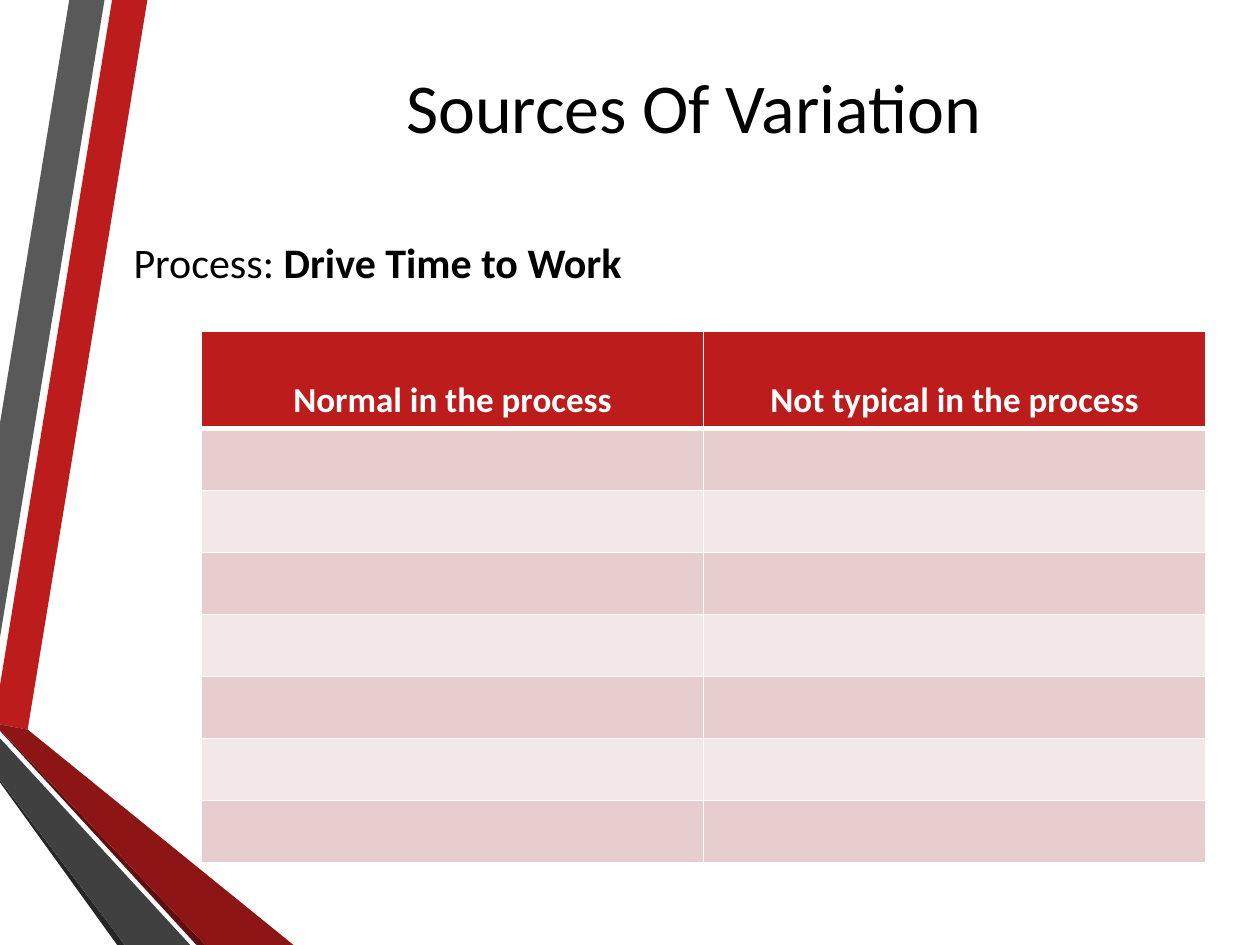
import pptx
import pptx.dml.color
import pptx.enum.text
import pptx.oxml
import pptx.oxml.ns
import pptx.util

RGBColor = pptx.dml.color.RGBColor
RED = RGBColor(0xBC, 0x1C, 0x1C)
DARK_RED = RGBColor(0x8D, 0x15, 0x15)
DEEP_RED = RGBColor(0x5E, 0x0E, 0x0E)
GRAY = RGBColor(0x59, 0x59, 0x59)
DARK_GRAY = RGBColor(0x40, 0x40, 0x40)
DEEP_GRAY = RGBColor(0x26, 0x26, 0x26)
ROSE = RGBColor(0xE7, 0xCD, 0xCD)
PALE_ROSE = RGBColor(0xF3, 0xE8, 0xE8)
BLACK = RGBColor(0, 0, 0)
WHITE = RGBColor(0xFF, 0xFF, 0xFF)

COLS, ROWS = 100, 75
CENTER = pptx.enum.text.PP_ALIGN.CENTER
LEFT = pptx.enum.text.PP_ALIGN.LEFT
ANCHOR = pptx.enum.text.MSO_ANCHOR

RIBBONS = [
    (RED, [(0, 54.4), (0, 57.5), (2.2, 57.9), (11.7, 0), (8.9, 0)]),
    (GRAY, [(8.3, 0), (5.5, 0), (0, 33.6), (0, 50.6)]),
    (DEEP_GRAY, [(0, 61.9), (0, 62.1), (9.3, 75), (9.9, 75)]),
    (DEEP_RED, [(0, 57.9), (0, 58), (15.6, 75), (16.3, 75)]),
    (DARK_RED, [(0, 57.9), (16.3, 75), (23.3, 75), (2.2, 57.9), (0, 57.5)]),
    (DARK_GRAY, [(0, 61.9), (9.9, 75), (15.1, 75), (0, 58.6)]),
]


def set_all(obj, values):
    """Set each named attribute on obj."""
    for name, value in values.items():
        setattr(obj, name, value)


class Deck:
    """Holds the style and the current slide, measured on a 100 by 75 grid."""

    font = "Calibri"

    def __init__(self, prs):
        """Add a title and content slide to prs."""
        self.unit_x = prs.slide_width / COLS
        self.unit_y = prs.slide_height / ROWS
        self.s = prs.slides.add_slide(prs.slide_layouts[1])

    def x(self, cols):
        """Turn grid columns into a length."""
        return pptx.util.Emu(round(cols * self.unit_x))

    def y(self, rows):
        """Turn grid rows into a length."""
        return pptx.util.Emu(round(rows * self.unit_y))

    def box(self, left, top, width, height):
        """Turn a grid box into lengths."""
        return self.x(left), self.y(top), self.x(width), self.y(height)

    def ribbon(self, color, points):
        """Draw a filled polygon."""
        points = [(self.x(a), self.y(b)) for a, b in points]
        builder = self.s.shapes.build_freeform(*points[0])
        builder.add_line_segments(points[1:], close=True)
        sp = builder.convert_to_shape()
        sp.shadow.inherit = False
        sp.fill.solid()
        sp.fill.fore_color.rgb = color
        sp.line.fill.background()

    def add_text(self, p, runs, size, color, align):
        """Put (text, bold) runs into a paragraph."""
        p.alignment = align
        for text, bold in runs:
            r = p.add_run()
            r.text = text
            set_all(r.font, {"name": self.font, "size": pptx.util.Pt(size), "bold": bold})
            r.font.color.rgb = color

    def placeholder(self, idx, box, runs, size, align):
        """Move a placeholder to the front, place it and fill it."""
        sp = self.s.placeholders[idx]
        set_all(sp, dict(zip(("left", "top", "width", "height"), self.box(*box))))
        self.s.shapes._spTree.append(sp._element)
        tf = sp.text_frame
        set_all(tf, {"word_wrap": True, "vertical_anchor": ANCHOR.MIDDLE,
                     "auto_size": pptx.enum.text.MSO_AUTO_SIZE.NONE})
        p = tf.paragraphs[0]
        self.add_text(p, runs, size, BLACK, align)
        return p

    def plain_line(self, p):
        """Drop the bullet of a paragraph and space it."""
        set_all(p, {"line_spacing": 1.3, "space_after": pptx.util.Pt(6)})
        pPr = p._p.get_or_add_pPr()
        pPr.set("marL", "0")
        pPr.set("indent", "0")
        pPr.append(pptx.oxml.parse_xml(f"<a:buNone {pptx.oxml.ns.nsdecls('a')}/>"))

    def cell(self, cell, color, top, bottom):
        """Fill a cell and give it white borders."""
        tcPr = cell._tc.get_or_add_tcPr()
        for side, pt in (("L", 1), ("R", 1), ("T", top), ("B", bottom)):
            tcPr.append(pptx.oxml.parse_xml(
                f"<a:ln{side} {pptx.oxml.ns.nsdecls('a')} w='{int(pptx.util.Pt(pt))}'>"
                f"<a:solidFill><a:srgbClr val='{WHITE}'/></a:solidFill></a:ln{side}>"))
        cell.fill.solid()
        cell.fill.fore_color.rgb = color

    def table(self, box, headers, blank_rows, head_height):
        """Draw a headed table with banded blank rows."""
        rows = blank_rows + 1
        table = self.s.shapes.add_table(rows, len(headers), *self.box(*box)).table
        row_height = (box[3] - head_height) / blank_rows
        for i, row in enumerate(table.rows):
            row.height = self.y(row_height if i else head_height)
            color = (PALE_ROSE, ROSE)[i % 2] if i else RED
            for cell in row.cells:
                self.cell(cell, color, 3 if i == 1 else 1, 3 if i == 0 else 1)
        for cell, text in zip(table.rows[0].cells, headers):
            cell.vertical_anchor = ANCHOR.BOTTOM
            self.add_text(cell.text_frame.paragraphs[0], [(text, True)], 20, WHITE, CENTER)


def main():
    """Build the slide and save it."""
    prs = pptx.Presentation()
    set_all(prs, {"slide_width": pptx.util.Inches(10), "slide_height": pptx.util.Inches(7.5)})
    deck = Deck(prs)
    for color, points in RIBBONS:
        deck.ribbon(color, points)
    deck.placeholder(0, (12.9, -2.5, 84.3, 21.7), [("Sources Of Variation", False)], 40, CENTER)
    process = deck.placeholder(1, (9.6, 15.2, 85, 10),
                               [("Process: ", False), ("Drive Time to Work", True)], 24, LEFT)
    deck.plain_line(process)
    deck.table((16, 26.3, 79.7, 42.2), ["Normal in the process", "Not typical in the process"], 7, 7.7)
    prs.save("out.pptx")


if __name__ == "__main__":
    main()
